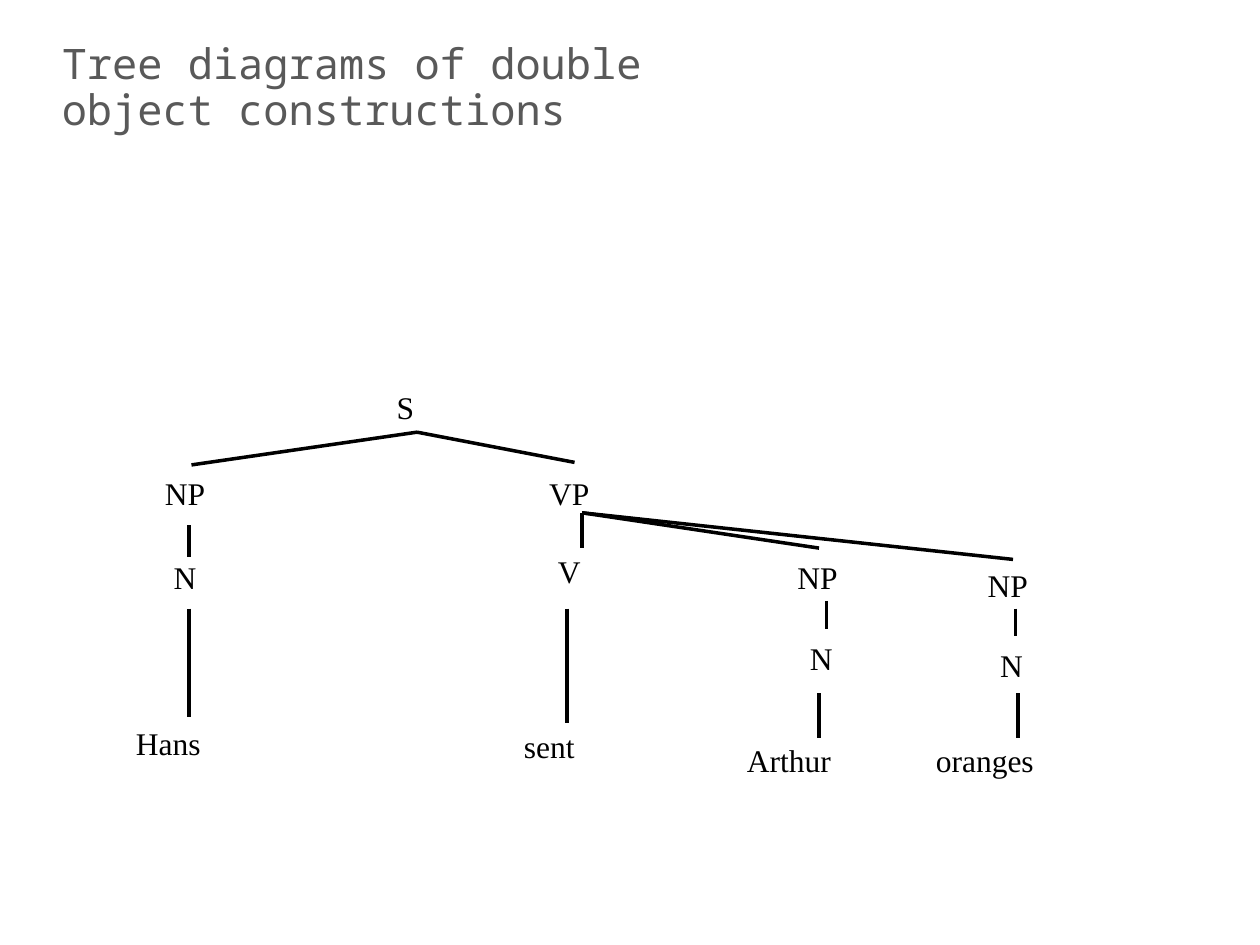
import pptx
import pptx.util
import pptx.dml.color
import pptx.enum.text
import pptx.enum.shapes
import pptx.oxml.ns
from lxml import etree

TITLE = "Tree diagrams of double object constructions"

WIDTHS = {"S": 3.8, "N": 4.4, "V": 4.4, "NP": 6.2, "VP": 6.2,
          "Hans": 8.8, "sent": 7.3, "Arthur": 10.9, "oranges": 12.3}

NODES = [
    ("S", 30.5, 30.3),
    ("NP", 12.1, 37.1), ("N", 12.8, 43.8), ("Hans", 9.8, 57),
    ("VP", 42.6, 37.1), ("V", 43.3, 43.3), ("sent", 40.6, 57.2),
    ("NP", 62.3, 43.8), ("N", 63.3, 50.2), ("Arthur", 58.3, 58.3),
    ("NP", 77.4, 44.4), ("N", 78.4, 50.8), ("oranges", 73.3, 58.3),
]

FANS = [
    ((33.1, 34.3), [(15.2, 36.9), (45.6, 36.7)]),
    ((46.2, 40.7), [(46.2, 43.5), (65, 43.5), (80.4, 44.4)]),
]

STEMS = [
    (15, 41.7, 44.2), (15, 48.3, 56.9),
    (45, 48.3, 57.4),
    (65.6, 47.7, 49.9), (65, 55, 58.6),
    (80.6, 48.3, 50.5), (80.8, 55, 58.6),
]

COLS, ROWS = 100, 75
BOX = (3.9, 1.9, 55.7, 10.3)
TALL = 5

Pt = pptx.util.Pt
Color = pptx.dml.color.RGBColor
Text = pptx.enum.text

THEME = {
    "title": {"name": "Noto Sans Mono", "size": Pt(24), "bold": False,
              "color": Color.from_string("595959")},
    "node": {"name": "Times New Roman", "size": Pt(18),
             "color": Color.from_string("000000")},
    "line": {"color": Color.from_string("000000"), "width": Pt(2)},
}

deck = pptx.Presentation()
deck.slide_width = pptx.util.Inches(10)
deck.slide_height = pptx.util.Inches(7.5)
slide = deck.slides.add_slide(deck.slide_layouts[5])


def grid(*vals):
    units = (deck.slide_width / COLS, deck.slide_height / ROWS)
    return [round(val * units[i % 2]) for i, val in enumerate(vals)]


def style(part, look):
    for key, val in look.items():
        if key == "color":
            part.color.rgb = val
        else:
            setattr(part, key, val)


def fill(frame, text, look, **form):
    for key, val in form.items():
        setattr(frame, key, val)
    para = frame.paragraphs[0]
    para.alignment = Text.PP_ALIGN.LEFT
    run = para.add_run()
    run.text = text
    style(run.font, look)
    return para


def branch(start, end):
    line = slide.shapes.add_connector(
        pptx.enum.shapes.MSO_CONNECTOR.STRAIGHT, *grid(*start, *end))
    line.line.fill.solid()
    style(line.line, THEME["line"])
    etree.SubElement(line._element.spPr, pptx.oxml.ns.qn("a:effectLst"))


title = slide.shapes.title
for key, val in zip(("left", "top", "width", "height"), grid(*BOX)):
    setattr(title, key, val)
para = fill(title.text_frame, TITLE, THEME["title"], word_wrap=True,
            auto_size=Text.MSO_AUTO_SIZE.NONE,
            vertical_anchor=Text.MSO_ANCHOR.MIDDLE)
para.line_spacing = 0.9

for word, col, row in NODES:
    box = slide.shapes.add_textbox(*grid(col, row, WIDTHS[word], TALL))
    fill(box.text_frame, word, THEME["node"], word_wrap=False,
         auto_size=Text.MSO_AUTO_SIZE.SHAPE_TO_FIT_TEXT)

for start, ends in FANS:
    for end in ends:
        branch(start, end)

for col, top, low in STEMS:
    branch((col, top), (col, low))

deck.save("out.pptx")
